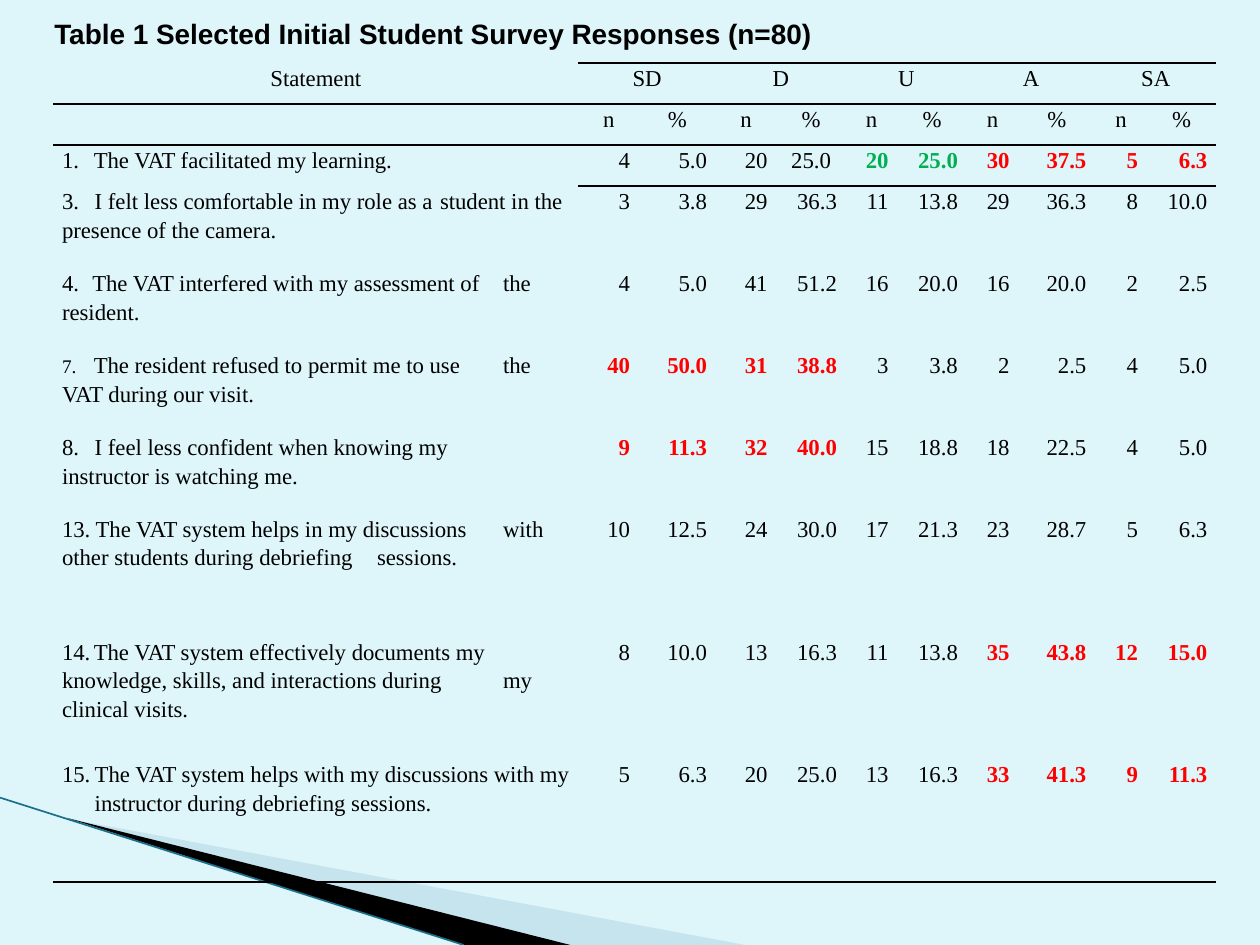
from dataclasses import dataclass, field

from lxml import etree
from pptx import Presentation
from pptx.dml.color import RGBColor
from pptx.enum.shapes import MSO_CONNECTOR
from pptx.enum.text import MSO_ANCHOR, MSO_AUTO_SIZE, PP_ALIGN
from pptx.oxml.ns import qn
from pptx.util import Cm, Pt

LEFT, MID, RIGHT = PP_ALIGN.LEFT, PP_ALIGN.CENTER, PP_ALIGN.RIGHT
TOP, FIXED = MSO_ANCHOR.TOP, MSO_AUTO_SIZE.NONE
LINE = MSO_CONNECTOR.STRAIGHT

BLACK = RGBColor(0x00, 0x00, 0x00)
RED = RGBColor(0xFF, 0x00, 0x00)
GREEN = RGBColor(0x00, 0xB0, 0x50)
SKY = RGBColor(0xDE, 0xF5, 0xFA)
PALE = RGBColor(0xA0, 0xCB, 0xDC)
TEAL = RGBColor(0x1A, 0x70, 0x8C)

SERIF, SANS = "Times New Roman", "Arial"
PLAIN_STYLE = "{2D5ABB26-0587-4C30-8999-92F81FD0307C}"
WIDTHS = (10.59, 1.22, 1.55, 1.22, 1.4, 1.04, 1.4, 1.04, 1.55, 1.04, 1.4)
UNIT = Cm(16.51) // 20
SCALE = ("SD", "D", "U", "A", "SA")


@dataclass
class Item:
    mark: str
    text: str
    data: str
    units: int = 2
    tints: dict[str, RGBColor] = field(default_factory=dict)
    tab: float = 0.64
    size: int = 13


ITEMS = (
    Item("1.\t", "The VAT facilitated my learning.",
         "4 5.0 20 25.0 20 25.0 30 37.5 5 6.3", 1,
         {"U": GREEN, "A": RED, "SA": RED}),
    Item("3.\t", "I felt less comfortable in my role as a \tstudent in the "
         "\tpresence of the camera.",
         "3 3.8 29 36.3 11 13.8 29 36.3 8 10.0", tab=0.66),
    Item("4.\t", "The VAT interfered with my assessment of \tthe resident.",
         "4 5.0 41 51.2 16 20.0 16 20.0 2 2.5", tab=0.61),
    Item("7.\t", "The resident refused to permit me to use "
         "\tthe VAT during our visit.",
         "40 50.0 31 38.8 3 3.8 2 2.5 4 5.0", tints={"SD": RED, "D": RED},
         size=11),
    Item("8.\t", "I feel less confident when knowing my "
         "\tinstructor is watching me.",
         "9 11.3 32 40.0 15 18.8 18 22.5 4 5.0",
         tints={"SD": RED, "D": RED}, tab=0.66),
    Item("13. ", "The VAT system helps in my discussions "
         "\twith other students during debriefing \tsessions.",
         "10 12.5 24 30.0 17 21.3 23 28.7 5 6.3", 3, tab=0.61),
    Item("14.\t", "The VAT system effectively documents my "
         "\tknowledge, skills, and interactions during \tmy clinical visits.",
         "8 10.0 13 16.3 11 13.8 35 43.8 12 15.0", 3,
         {"A": RED, "SA": RED}),
    Item("15.\t", "The VAT system helps with my discussions with my "
         "\tinstructor during debriefing sessions.",
         "5 6.3 20 25.0 13 16.3 33 41.3 9 11.3", 3,
         {"A": RED, "SA": RED}, 0.66),
)


def write(frame, text: str, *, size=13, font=SERIF, color=BLACK, bold=False,
          align=LEFT, space=1.15, tab=None) -> None:
    """Add a run to the first paragraph and format both."""
    para = frame.paragraphs[0]
    para.alignment = align
    para.line_spacing = space
    if tab:
        tabs = etree.SubElement(para._p.get_or_add_pPr(), qn("a:tabLst"))
        etree.SubElement(tabs, qn("a:tab"), pos=str(Cm(tab)), algn="l")
    run = para.add_run()
    run.text = text
    run.font.size = Pt(size)
    run.font.name = font
    run.font.bold = bold
    run.font.color.rgb = color


def rule(cell, edges: str) -> None:
    """Draw black lines on the named edges, in the order T, B."""
    props = cell._tc.get_or_add_tcPr()
    for edge in edges:
        line = etree.SubElement(props, qn(f"a:ln{edge}"), w=str(Pt(1)))
        fill = etree.SubElement(line, qn("a:solidFill"))
        etree.SubElement(fill, qn("a:srgbClr"), val=str(BLACK))


def edges_at(row: int, col: int, last: int) -> str:
    if row == 0:
        return "TB" if col else "B"
    if row == 1:
        return "TB" if col else "T"
    if row == 2:
        return "T" if col else ""
    return "B" if row == last else ""


def wedge(slide, points: tuple, color: RGBColor, alpha: int = 100) -> None:
    first, *rest = [(Cm(x), Cm(y)) for x, y in points]
    pen = slide.shapes.build_freeform(*first)
    pen.add_line_segments(rest, close=True)
    shape = pen.convert_to_shape()
    shape.shadow.inherit = False
    shape.line.fill.background()
    shape.fill.solid()
    shape.fill.fore_color.rgb = color
    if alpha < 100:
        tone = shape._element.spPr.find(".//" + qn("a:srgbClr"))
        etree.SubElement(tone, qn("a:alpha"), val=str(alpha * 1000))


def draw_swoosh(slide) -> None:
    wedge(slide, ((1.4, 16.51), (15.02, 19.05), (11.5, 19.05)), PALE, 40)
    wedge(slide, ((1.35, 16.49), (11.5, 19.05), (9.35, 19.05)), BLACK)
    line = slide.shapes.add_connector(LINE, 0, Cm(16.08), Cm(9.35), Cm(19.05))
    line.line.color.rgb = TEAL
    line.line.width = Pt(0.95)
    etree.SubElement(line._element.spPr, qn("a:effectLst"))


def draw_title(slide) -> None:
    title = slide.shapes.title
    title.left, title.top = Cm(0.84), Cm(0.2)
    title.width, title.height = Cm(17.35), Cm(1.7)
    frame = title.text_frame
    frame.auto_size = FIXED
    frame.word_wrap = True
    frame.vertical_anchor = TOP
    write(frame, "Table 1 Selected Initial Student Survey Responses (n=80)",
          size=16, font=SANS, bold=True, space=1.0)


def draw_table(slide) -> None:
    units = [1, 1] + [item.units for item in ITEMS]
    table = slide.shapes.add_table(
        len(units), len(WIDTHS), Cm(1.07), Cm(1.27),
        Cm(sum(WIDTHS)), UNIT * sum(units)).table
    table.first_row = table.horz_banding = False
    table._tbl.tblPr.find(qn("a:tableStyleId")).text = PLAIN_STYLE
    for col, width in zip(table.columns, WIDTHS):
        col.width = Cm(width)
    for r, count in enumerate(units):
        table.rows[r].height = UNIT * count
        for c in range(len(WIDTHS)):
            cell = table.cell(r, c)
            cell.margin_left = cell.margin_right = Cm(0.18)
            cell.margin_top = cell.margin_bottom = 0
            rule(cell, edges_at(r, c, len(units) - 1))
            cell.fill.background()

    write(table.cell(0, 0).text_frame, "Statement", align=MID)
    for i, name in enumerate(SCALE):
        c = 2 * i + 1
        table.cell(0, c).merge(table.cell(0, c + 1))
        write(table.cell(0, c).text_frame, name, align=MID)
        write(table.cell(1, c).text_frame, "n", align=MID)
        write(table.cell(1, c + 1).text_frame, "%", align=MID)

    for r, item in enumerate(ITEMS, 2):
        frame = table.cell(r, 0).text_frame
        write(frame, item.mark, size=item.size, tab=item.tab)
        write(frame, item.text)
        for c, value in enumerate(item.data.split(), 1):
            tint = item.tints.get(SCALE[(c - 1) // 2])
            write(table.cell(r, c).text_frame, value, color=tint or BLACK,
                  bold=tint is not None,
                  align=MID if (r, c) == (2, 4) else RIGHT)


def main() -> None:
    deck = Presentation()
    deck.slide_width, deck.slide_height = Cm(25.4), Cm(19.05)
    slide = deck.slides.add_slide(deck.slide_layouts[5])
    slide.background.fill.solid()
    slide.background.fill.fore_color.rgb = SKY
    draw_swoosh(slide)
    draw_table(slide)
    draw_title(slide)
    deck.save("out.pptx")


if __name__ == "__main__":
    main()
